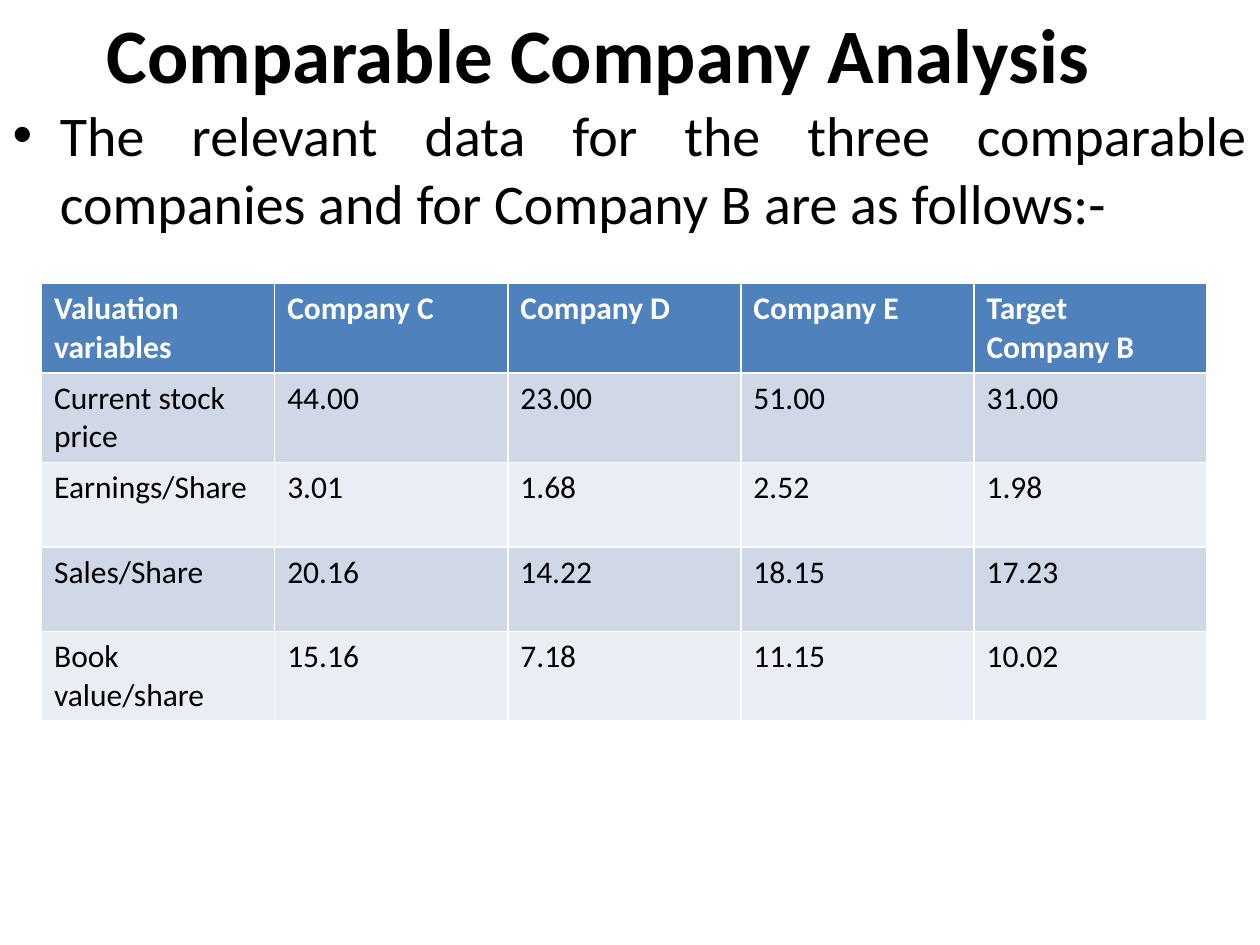
from typing import NamedTuple

from pptx import Presentation
from pptx.dml.color import RGBColor
from pptx.enum.text import MSO_ANCHOR, MSO_AUTO_SIZE, PP_ALIGN
from pptx.util import Inches, Pt

COLORS = {
    "text": "000000",
    "header_text": "FFFFFF",
    "header": "4F81BD",
    "odd_row": "D0D8E8",
    "even_row": "E9EDF4",
}


class Metric(NamedTuple):
    label: str
    values: tuple[str, ...]


HEADERS = ("Valuation variables", "Company C", "Company D", "Company E",
           "Target Company B")
METRICS = (
    Metric("Current stock price", ("44.00", "23.00", "51.00", "31.00")),
    Metric("Earnings/Share", ("3.01", "1.68", "2.52", "1.98")),
    Metric("Sales/Share", ("20.16", "14.22", "18.15", "17.23")),
    Metric("Book value/share", ("15.16", "7.18", "11.15", "10.02")),
)


def write(tf, text: str, *, size: float, color: str = "text",
          bold: bool = False, align=PP_ALIGN.LEFT) -> None:
    p = tf.paragraphs[0]
    p.alignment = align
    p.space_before = Pt(0)
    r = p.add_run()
    r.text = text
    r.font.name = "Calibri"
    r.font.size = Pt(size)
    r.font.bold = bold
    r.font.color.rgb = RGBColor.from_string(COLORS[color])


def place(sp, left: float, top: float, width: float, height: float) -> None:
    sp.left, sp.top = Inches(left), Inches(top)
    sp.width, sp.height = Inches(width), Inches(height)
    sp.text_frame.word_wrap = True
    sp.text_frame.auto_size = MSO_AUTO_SIZE.NONE


def fill_row(table, index: int, texts: tuple[str, ...], fill: str,
             **text_format) -> None:
    table.rows[index].height = Inches(0.67)
    for cell, text in zip(table.rows[index].cells, texts):
        cell.fill.solid()
        cell.fill.fore_color.rgb = RGBColor.from_string(COLORS[fill])
        write(cell.text_frame, text, size=18, **text_format)


def add_metrics_table(s) -> None:
    rows, cols = len(METRICS) + 1, len(HEADERS)
    table = s.shapes.add_table(rows, cols, Inches(0.33), Inches(2.25),
                               Inches(9.25), Inches(0.67 * rows)).table
    fill_row(table, 0, HEADERS, "header", color="header_text", bold=True)
    for i, metric in enumerate(METRICS, start=1):
        fill_row(table, i, (metric.label, *metric.values),
                 "odd_row" if i % 2 else "even_row")


def main() -> None:
    prs = Presentation()
    prs.slide_width, prs.slide_height = Inches(10), Inches(7.5)
    s = prs.slides.add_slide(prs.slide_layouts[1])

    title = s.shapes.title
    place(title, 0, 0, 9.5, 0.83)
    title.text_frame.vertical_anchor = MSO_ANCHOR.MIDDLE
    write(title.text_frame, "Comparable Company Analysis", size=44, bold=True,
          align=PP_ALIGN.CENTER)

    body = s.placeholders[1]
    place(body, 0, 0.75, 10, 6.92)
    write(body.text_frame,
          "The relevant data for the three comparable companies and for "
          "Company B are as follows:-", size=32, align=PP_ALIGN.JUSTIFY)

    add_metrics_table(s)
    prs.save("out.pptx")


if __name__ == "__main__":
    main()
